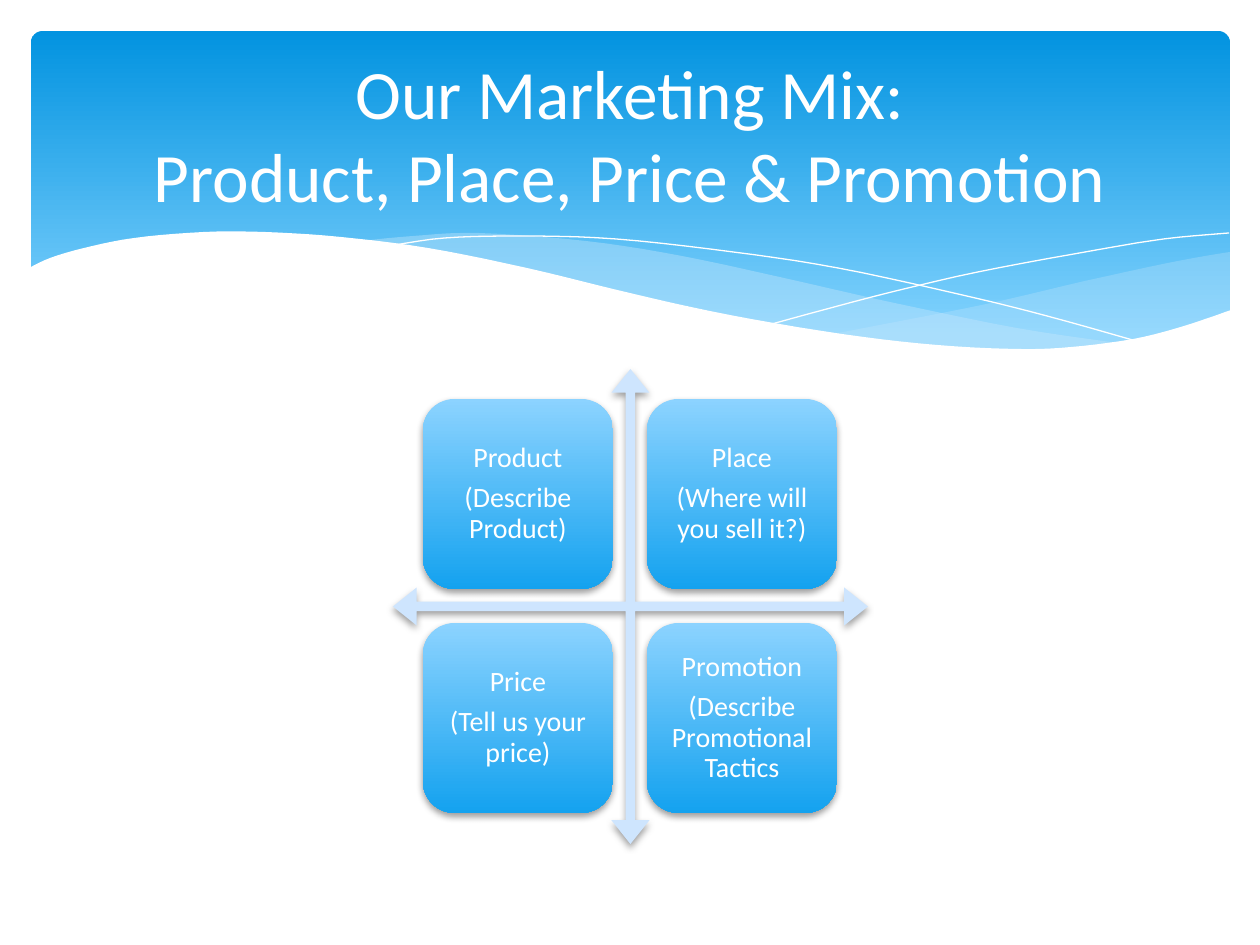
from dataclasses import dataclass
from typing import NamedTuple

from lxml.etree import SubElement
from pptx import Presentation
from pptx.dml.color import RGBColor
from pptx.enum.shapes import MSO_SHAPE as Shape
from pptx.enum.text import MSO_ANCHOR as Anchor, MSO_AUTO_SIZE as AutoSize, PP_ALIGN as Align
from pptx.oxml.ns import qn
from pptx.util import Emu, Pt

PX = 914400 / 126
FINE = 10


class Box(NamedTuple):
    left: int
    top: int
    width: int
    height: int

    def emu(self):
        """Return the four lengths in EMU."""
        return [Emu(round(value * PX)) for value in self]

    def inner(self, left, top, width, height):
        """Return a box placed relative to this one."""
        return Box(self.left + left, self.top + top, width, height)


@dataclass(frozen=True)
class Theme:
    font: str = "Calibri"
    white: str = "FFFFFF"
    black: str = "000000"
    wave: str = "C6E7FC"
    arrow: str = "CEE5FE"
    banner: tuple = ((0, "0293E0"), (0.9, "83D3FE"))
    tile: tuple = ((0, "8CD3FF"), (1, "14A2EF"))
    title_size: float = 39.6
    tile_size: float = 16


THEME = Theme()

RIGHT_WAVE = [
    [(1199, 221), (1147, 230), (1054, 250), (951, 274), (802, 303)],
    [(802, 303), (875, 312), (953, 318), (1021, 318), (1089, 312), (1147, 299), (1199, 280)],
]
MIDDLE_WAVE = [
    [(1094, 313), (986, 297), (859, 271), (762, 249), (651, 225), (555, 210),
     (448, 202), (382, 205), (329, 210)],
    [(329, 210), (400, 220), (478, 235), (535, 249), (637, 271), (768, 298),
     (862, 312), (958, 319), (1037, 318), (1094, 313)],
]
FALLING_LINE = [[(358, 215), (414, 207), (493, 205), (585, 208), (702, 221),
                 (807, 237), (927, 263), (1016, 285), (1112, 312)]]
RISING_LINE = [[(741, 293), (845, 265), (947, 241), (1060, 220), (1133, 208), (1198, 202)]]
WHITE_WAVE = [
    [(1200, 279), (1153, 295), (1102, 308), (1040, 316), (988, 318), (906, 314),
     (811, 303), (699, 284), (603, 263), (496, 237), (397, 217), (310, 206),
     (235, 201), (172, 201), (103, 207), (53, 217), (19, 227), (-2, 237)],
    [(-2, 384), (1200, 384)],
]
TILES = [
    ("Product", "(Describe Product)"),
    ("Place", "(Where will you sell it?)"),
    ("Price", "(Tell us your price)"),
    ("Promotion", "(Describe Promotional Tactics"),
]


def smooth_edge(knots, steps=5):
    """Return points on a Catmull-Rom curve through the knots."""
    padded = [knots[0], *knots, knots[-1]]
    points = [knots[0]]
    for a, b, c, d in zip(padded, padded[1:], padded[2:], padded[3:]):
        for step in range(1, steps + 1):
            t = step / steps
            points.append(tuple(
                (2 * q + (r - p) * t + (2 * p - 5 * q + 4 * r - s) * t**2
                 + (3 * q - p - 3 * r + s) * t**3) / 2
                for p, q, r, s in zip(a, b, c, d)))
    return points


def paint(shape, color, opacity=100):
    """Give a shape a plain fill with no line or theme shadow."""
    shape.shadow.inherit = False
    shape.line.fill.background()
    shape.fill.solid()
    shape.fill.fore_color.rgb = RGBColor.from_string(color)
    if opacity < 100:
        color_node = shape.element.spPr.find(qn("a:solidFill"))[0]
        SubElement(color_node, qn("a:alpha"), val=str(opacity * 1000))


def paint_gradient(shape, stops):
    """Give a shape a top-to-bottom gradient with no line."""
    shape.shadow.inherit = False
    shape.line.fill.background()
    shape.fill.gradient()
    shape.fill.gradient_angle = 270
    for stop, (position, color) in zip(shape.fill.gradient_stops, stops):
        stop.position = position
        stop.color.rgb = RGBColor.from_string(color)


def add_shadow(shape):
    """Add a soft shadow below a shape."""
    effects = shape.element.spPr.find(qn("a:effectLst"))
    shadow = SubElement(effects, qn("a:outerShdw"), blurRad=str(Pt(4)), dist=str(Pt(2)),
                        dir="5400000", algn="ctr", rotWithShape="0")
    color = SubElement(shadow, qn("a:srgbClr"), val=THEME.black)
    SubElement(color, qn("a:alpha"), val="38000")


def write(para, text, *, size, color=THEME.white, line_spacing=None, space_after=None):
    """Write centred text into a paragraph."""
    para.text = text
    para.alignment = Align.CENTER
    para.line_spacing = line_spacing
    para.space_after = space_after
    para.font.name = THEME.font
    para.font.size = Pt(size)
    para.font.color.rgb = RGBColor.from_string(color)
    for span in para.runs:
        span.font.name = THEME.font


def add_curve(page, box, edges, close=True):
    """Draw smooth edges, joined into one outline, relative to the box."""
    points = [(round((box.left + x) * FINE), round((box.top + y) * FINE))
              for edge in edges for x, y in smooth_edge(edge)]
    builder = page.shapes.build_freeform(*points[0], scale=PX / FINE)
    builder.add_line_segments(points[1:], close=close)
    return builder.convert_to_shape()


def add_header(page, box):
    """Draw the blue banner with its waves."""
    banner = page.shapes.add_shape(Shape.ROUNDED_RECTANGLE, *box.emu())
    banner.adjustments[0] = 0.034
    paint_gradient(banner, THEME.banner)
    for edges, opacity in ((RIGHT_WAVE, 29), (MIDDLE_WAVE, 40)):
        paint(add_curve(page, box, edges), THEME.wave, opacity)
    for edges in (FALLING_LINE, RISING_LINE):
        line = add_curve(page, box, edges, close=False)
        line.shadow.inherit = False
        line.fill.background()
        line.line.color.rgb = RGBColor.from_string(THEME.white)
        line.line.width = Pt(0)
    paint(add_curve(page, box, WHITE_WAVE), THEME.white)


def add_tile(page, box, texts):
    """Draw one rounded tile with a heading and its prompt."""
    tile = page.shapes.add_shape(Shape.ROUNDED_RECTANGLE, *box.emu())
    paint_gradient(tile, THEME.tile)
    add_shadow(tile)
    frame = tile.text_frame
    frame.word_wrap = True
    frame.vertical_anchor = Anchor.MIDDLE
    inset = Emu(round(9 * PX))
    frame.margin_left = frame.margin_right = frame.margin_top = frame.margin_bottom = inset
    for index, text in enumerate(texts):
        para = frame.add_paragraph() if index else frame.paragraphs[0]
        write(para, text, size=THEME.tile_size, line_spacing=0.9, space_after=Pt(5.6))


def add_matrix(page, box, side=190, gap=34):
    """Draw the four-way arrow and the two-by-two tiles."""
    arrow = page.shapes.add_shape(Shape.QUAD_ARROW, *box.emu())
    for index, value in enumerate((0.02, 0.04, 0.05)):
        arrow.adjustments[index] = value
    paint(arrow, THEME.arrow)
    add_shadow(arrow)
    margin = (box.width - 2 * side - gap) // 2
    for index, texts in enumerate(TILES):
        row, column = divmod(index, 2)
        add_tile(page, box.inner(margin + column * (side + gap), margin + row * (side + gap),
                                 side, side), texts)


def place_title(page, box, text):
    """Place the title in front of the banner."""
    title = page.shapes.title
    title.left, title.top, title.width, title.height = box.emu()
    frame = title.text_frame
    frame.word_wrap = True
    frame.auto_size = AutoSize.NONE
    frame.vertical_anchor = Anchor.MIDDLE
    write(frame.paragraphs[0], text, size=THEME.title_size)
    title.element.getparent().append(title.element)


def main():
    """Build and save the deck."""
    deck = Presentation()
    deck.slide_width, deck.slide_height = Box(0, 0, 1260, 945).emu()[2:]
    page = deck.slides.add_slide(deck.slide_layouts[5])
    add_header(page, Box(31, 31, 1199, 340))
    add_matrix(page, Box(393, 369, 475, 475))
    place_title(page, Box(63, 47, 1134, 173), "Our Marketing Mix:\vProduct, Place, Price & Promotion")
    deck.save("out.pptx")


if __name__ == "__main__":
    main()
